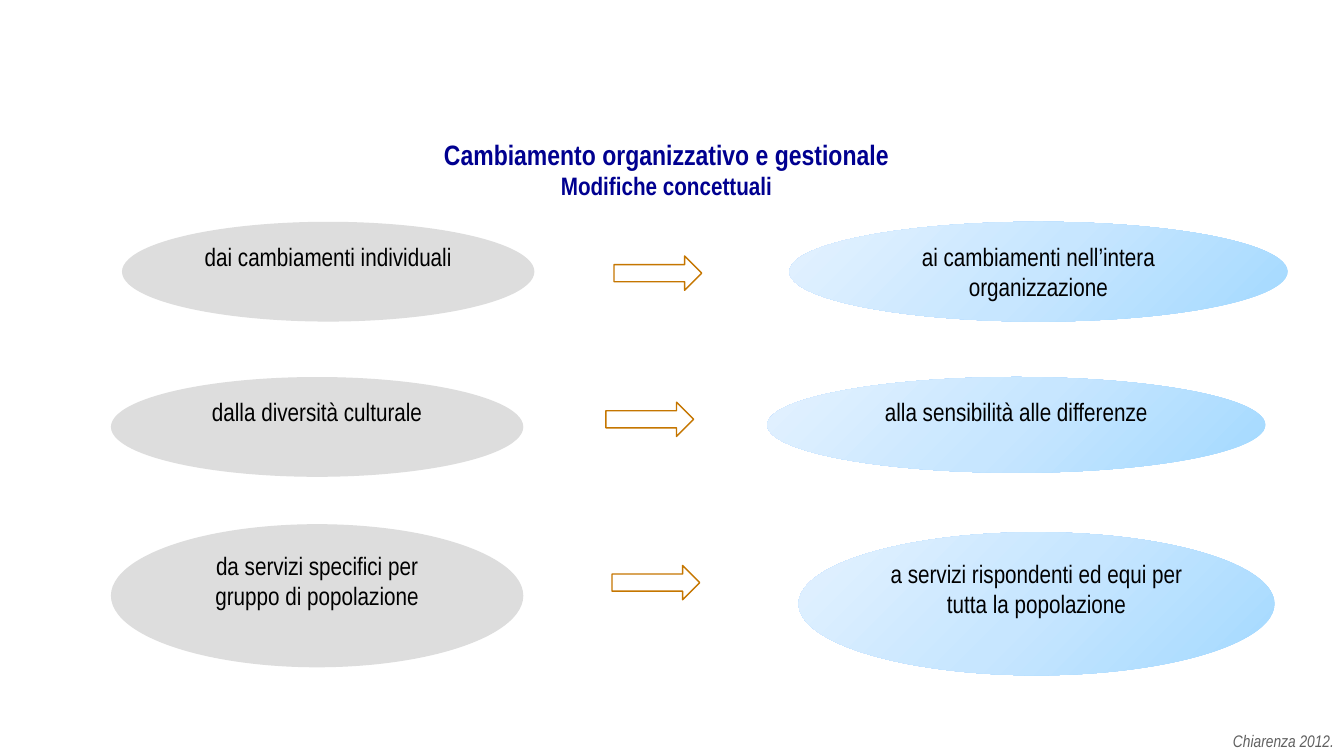
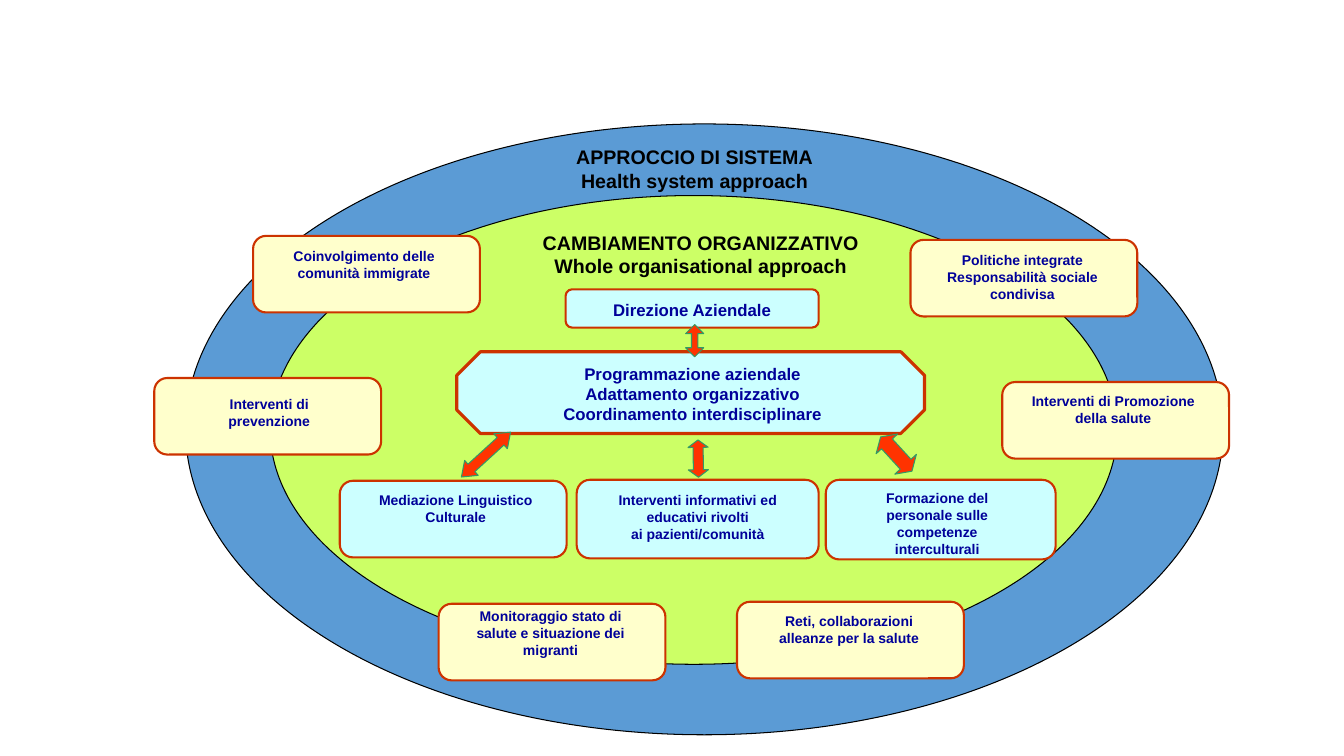
import copy

import pptx
import pptx.dml.color
import pptx.enum.shapes
import pptx.enum.text
import pptx.oxml.ns
import pptx.util

PX = 9144
SHAPE = pptx.enum.shapes.MSO_SHAPE
ALIGN = pptx.enum.text.PP_ALIGN
rgb = pptx.dml.color.RGBColor.from_string

NAVY, BLUE, BLACK, RED = "000090", "000099", "000000", "CC3300"
CYAN, CREAM = "CCFFFF", "FFFFCC"
HEADING = {"name": "Arial Narrow", "size": pptx.util.Pt(20), "bold": True}
CONCEPT = {"name": "Arial Narrow", "size": pptx.util.Pt(18), "bold": False}
CREDIT = {"name": "Arial Narrow", "size": pptx.util.Pt(12), "italic": True}
APPROACH = {"name": "Arial", "size": pptx.util.Pt(14), "bold": True}
LEADERSHIP = {"name": "Arial", "size": pptx.util.Pt(12), "bold": True}
ACTIVITY = {"name": "Arial", "size": pptx.util.Pt(10), "bold": True}


def write(shape, text, font_format, color, align=ALIGN.CENTER, margins=(10, 5, 10, 5)):
    left, top, right, bottom = (margin * PX for margin in margins)
    frame = shape.text_frame
    frame.text = text
    frame_format = {
        "word_wrap": True,
        "auto_size": pptx.enum.text.MSO_AUTO_SIZE.NONE,
        "vertical_anchor": pptx.enum.text.MSO_ANCHOR.TOP,
        "margin_left": left,
        "margin_top": top,
        "margin_right": right,
        "margin_bottom": bottom,
    }
    for key, value in frame_format.items():
        setattr(frame, key, value)
    for paragraph in frame.paragraphs:
        paragraph.alignment = align
        for key, value in font_format.items():
            setattr(paragraph.font, key, value)
        paragraph.font.color.rgb = rgb(color)


def draw(slide, kind, place, fill, line=None, width=0.75, adjustments=()):
    shape = slide.shapes.add_shape(kind, *(length * PX for length in place))
    shape.shadow.inherit = False
    shape.fill.solid()
    shape.fill.fore_color.rgb = rgb(fill)
    if line:
        shape.line.color.rgb = rgb(line)
        shape.line.width = pptx.util.Pt(width)
    else:
        shape.line.fill.background()
    for index, value in enumerate(adjustments):
        shape.adjustments[index] = value
    return shape


deck = pptx.Presentation()
deck.slide_width, deck.slide_height = 1333 * PX, 750 * PX
title_only = deck.slide_layouts[5]
concepts, system = (deck.slides.add_slide(title_only) for _ in range(2))

titles = [
    (concepts, "Cambiamento organizzativo e gestionale\nModifiche concettuali",
     (89, 131, 1144, 73), HEADING, NAVY),
    (system, "APPROCCIO DI SISTEMA\nHealth system approach",
     (451, 139, 476, 57), APPROACH, BLACK),
]
for slide, text, place, font_format, color in titles:
    title = slide.shapes.title
    title.left, title.top, title.width, title.height = (length * PX for length in place)
    write(title, text, font_format, color)
concepts.shapes.title.text_frame.paragraphs[1].font.size = pptx.util.Pt(18)

credit = concepts.shapes.add_textbox(89 * PX, 720 * PX, 1244 * PX, 30 * PX)
write(credit, "Chiarenza 2012.", CREDIT, "606060", ALIGN.RIGHT)

changes = [
    ("dai cambiamenti individuali", (121, 220, 409, 99), (609, 254),
     "ai cambiamenti nell’intera organizzazione", (783, 220, 494, 99)),
    ("dalla diversità culturale", (110, 374, 409, 99), (601, 399),
     "alla sensibilità alle differenze", (761, 374, 494, 95)),
    ("da servizi specifici per gruppo di popolazione", (110, 520, 409, 142), (607, 561),
     "a servizi rispondenti ed equi per tutta la popolazione", (792, 528, 472, 142)),
]
gradient = [(0, "A3D9FF"), (0.5, "C7E6FF"), (1, "E4F2FF")]
for before, before_place, arrow_corner, after, after_place in changes:
    origin = draw(concepts, SHAPE.OVAL, before_place, "DDDDDD")
    write(origin, before, CONCEPT, BLACK)
    draw(concepts, SHAPE.RIGHT_ARROW, (*arrow_corner, 87, 34), "FFFFFF", "C57600", 1)
    goal = draw(concepts, SHAPE.OVAL, after_place, gradient[0][1])
    write(goal, after, CONCEPT, BLACK)
    goal.fill.gradient()
    goal.fill.gradient_angle = 135
    first_stop = next(goal._element.spPr.iter(pptx.oxml.ns.qn("a:gs")))
    first_stop.addnext(copy.deepcopy(first_stop))
    for stop, (position, color) in zip(goal.fill.gradient_stops, gradient):
        stop.position = position
        stop.color.rgb = rgb(color)

draw(system, SHAPE.OVAL, (184, 123, 1029, 606), "5B9BD5", BLACK)
draw(system, SHAPE.OVAL, (268, 194, 840, 465), "CCFF66", BLACK)
system.shapes._spTree.append(system.shapes.title._element)
organisation = system.shapes.add_textbox(457 * PX, 224 * PX, 476 * PX, 57 * PX)
write(organisation, "CAMBIAMENTO ORGANIZZATIVO\nWhole organisational approach", APPROACH, BLACK)

planning = draw(system, SHAPE.OCTAGON, (453, 349, 464, 81), CYAN, RED, 2.25, [0.29])
write(planning,
      "Programmazione aziendale\nAdattamento organizzativo\nCoordinamento interdisciplinare",
      LEADERSHIP, BLUE, margins=(4, 0, 0, 0))

boxes = [
    ("Direzione Aziendale", (561, 287, 251, 38), CYAN, LEADERSHIP, (8, 8, 8)),
    ("Mediazione Linguistico Culturale", (337, 477, 225, 76), CYAN, ACTIVITY, (21, 7, 16)),
    ("Interventi informativi ed\neducativi rivolti\nai pazienti/comunità",
     (572, 476, 240, 78), CYAN, ACTIVITY, (6, 8, 6)),
    ("Formazione del\npersonale sulle\ncompetenze\ninterculturali",
     (819, 476, 228, 79), CYAN, ACTIVITY, (9, 6, 16)),
    ("Interventi di Promozione della salute",
     (994, 379, 225, 76), CREAM, ACTIVITY, (16, 7, 21)),
    ("Interventi di\nprevenzione", (153, 375, 225, 76), CREAM, ACTIVITY, (20, 14, 17)),
    ("Coinvolgimento delle comunità immigrate",
     (251, 234, 225, 76), CREAM, ACTIVITY, (16, 8, 21)),
    ("Reti, collaborazioni alleanze per la salute",
     (731, 597, 225, 76), CREAM, ACTIVITY, (17, 7, 20)),
    ("Monitoraggio stato di salute e situazione dei migranti",
     (435, 599, 225, 76), CREAM, ACTIVITY, (17, 0, 20)),
    ("Politiche integrate Responsabilità sociale condivisa",
     (903, 238, 225, 76), CREAM, ACTIVITY, (17, 8, 20)),
]
for text, place, fill, font_format, margins in boxes:
    box = draw(system, SHAPE.ROUNDED_RECTANGLE, place, fill, RED, 1.5, [0.17])
    write(box, text, font_format, BLUE, margins=(*margins, 0))

links = [
    (SHAPE.LEFT_RIGHT_ARROW, (674, 445, 37, 20), 89.1, 0.37),
    (SHAPE.LEFT_RIGHT_ARROW, (866, 436, 46, 29), 47.5, 0.32),
    (SHAPE.LEFT_RIGHT_ARROW, (449, 441, 66, 20), 137.6, 0.67),
    (SHAPE.UP_DOWN_ARROW, (680, 322, 18, 32), 0, 0.35),
]
for kind, place, rotation, head in links:
    link = draw(system, kind, place, "FF3300", "339966", adjustments=[0.5, head])
    link.rotation = rotation

deck.save("out.pptx")
